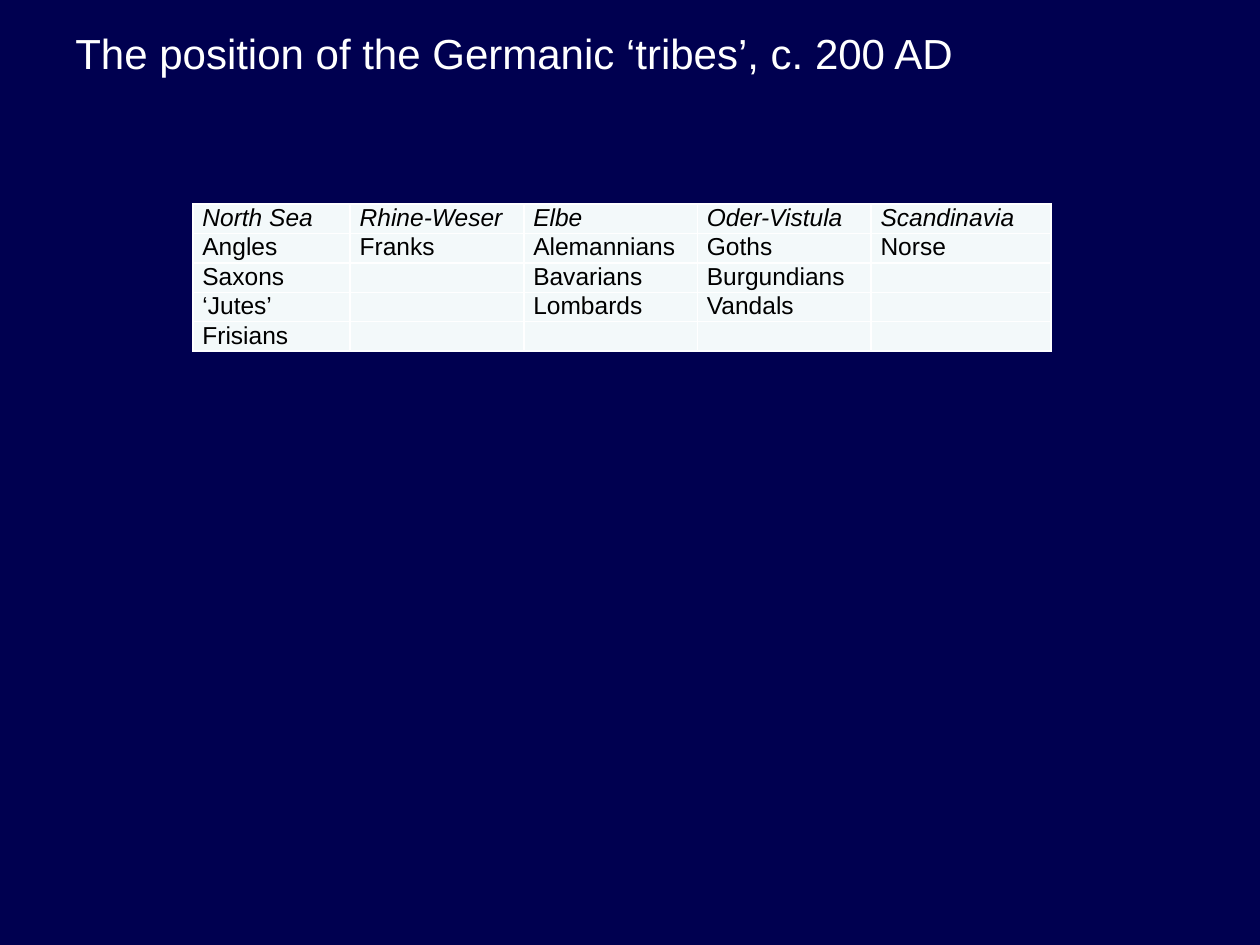
"""Build a slide with a table of the Germanic tribes around 200 AD."""
from lxml import etree
from pptx import Presentation
from pptx.dml.color import RGBColor
from pptx.enum.shapes import MSO_SHAPE
from pptx.oxml.ns import qn
from pptx.util import Cm, Pt

RECTANGLE = MSO_SHAPE.RECTANGLE
NAVY = RGBColor(0x00, 0x00, 0x50)
WHITE = RGBColor(0xFF, 0xFF, 0xFF)
BLACK = RGBColor(0x00, 0x00, 0x00)
PALE = RGBColor(0xF3, 0xF9, 0xFA)

COLUMN_WIDTHS = [3.17, 3.5, 3.5, 3.5, 3.63]
TRIBES = [
    ["North Sea", "Rhine-Weser", "Elbe", "Oder-Vistula", "Scandinavia"],
    ["Angles", "Franks", "Alemannians", "Goths", "Norse"],
    ["Saxons", "", "Bavarians", "Burgundians", ""],
    ["‘Jutes’", "", "Lombards", "Vandals", ""],
    ["Frisians", "", "", "", ""],
]


class SlideBuilder:
    font = "Arial"
    title_size = 24
    table_size = 14

    def __init__(self, prs):
        self.s = prs.slides.add_slide(prs.slide_layouts[6])

    def style(self, p, size, color, italic=False):
        p.font.name = self.font
        p.font.size = Pt(size)
        p.font.color.rgb = color
        p.font.italic = italic

    def backdrop(self, width, height, color):
        sp = self.s.shapes.add_shape(RECTANGLE, 0, 0, width, height)
        sp.shadow.inherit = False
        sp.fill.solid()
        sp.fill.fore_color.rgb = color
        sp.line.fill.background()

    def title(self, text, x, y, w, h):
        tf = self.s.shapes.add_textbox(Cm(x), Cm(y), Cm(w), Cm(h)).text_frame
        tf.word_wrap = True
        tf.margin_top = Cm(0.22)
        p = tf.paragraphs[0]
        p.text = text
        self.style(p, self.title_size, WHITE)

    def border(self, cell, color):
        tcPr = cell._tc.get_or_add_tcPr()
        for side in ("a:lnL", "a:lnR", "a:lnT", "a:lnB"):
            ln = etree.SubElement(tcPr, qn(side), w=str(Pt(1)))
            fill = etree.SubElement(ln, qn("a:solidFill"))
            etree.SubElement(fill, qn("a:srgbClr"), val=str(color))

    def cell(self, cell, text, italic):
        self.border(cell, WHITE)
        cell.fill.solid()
        cell.fill.fore_color.rgb = PALE
        cell.margin_left = cell.margin_right = Cm(0.19)
        cell.margin_top = cell.margin_bottom = 0
        p = cell.text_frame.paragraphs[0]
        if text:
            p.text = text
            p.space_after = Pt(5)
        self.style(p, self.table_size, BLACK, italic)
        etree.SubElement(p._p, qn("a:endParaRPr"), sz=str(self.table_size * 100))

    def table(self, rows, widths, x, y, row_height):
        table = self.s.shapes.add_table(
            len(rows), len(widths), Cm(x), Cm(y),
            Cm(sum(widths)), Cm(row_height * len(rows))).table
        for column, width in zip(table.columns, widths):
            column.width = Cm(width)
        for i, row in enumerate(rows):
            table.rows[i].height = Cm(row_height)
            for j, text in enumerate(row):
                self.cell(table.cell(i, j), text, italic=i == 0)


def main():
    prs = Presentation()
    prs.slide_width, prs.slide_height = Cm(25.4), Cm(19.05)
    slide = SlideBuilder(prs)
    slide.backdrop(prs.slide_width, prs.slide_height, NAVY)
    slide.title("The position of the Germanic ‘tribes’, c. 200 AD",
                1.27, 0.33, 24.13, 1.55)
    slide.table(TRIBES, COLUMN_WIDTHS, 3.89, 4.11, 0.56)
    prs.save("out.pptx")


if __name__ == "__main__":
    main()
